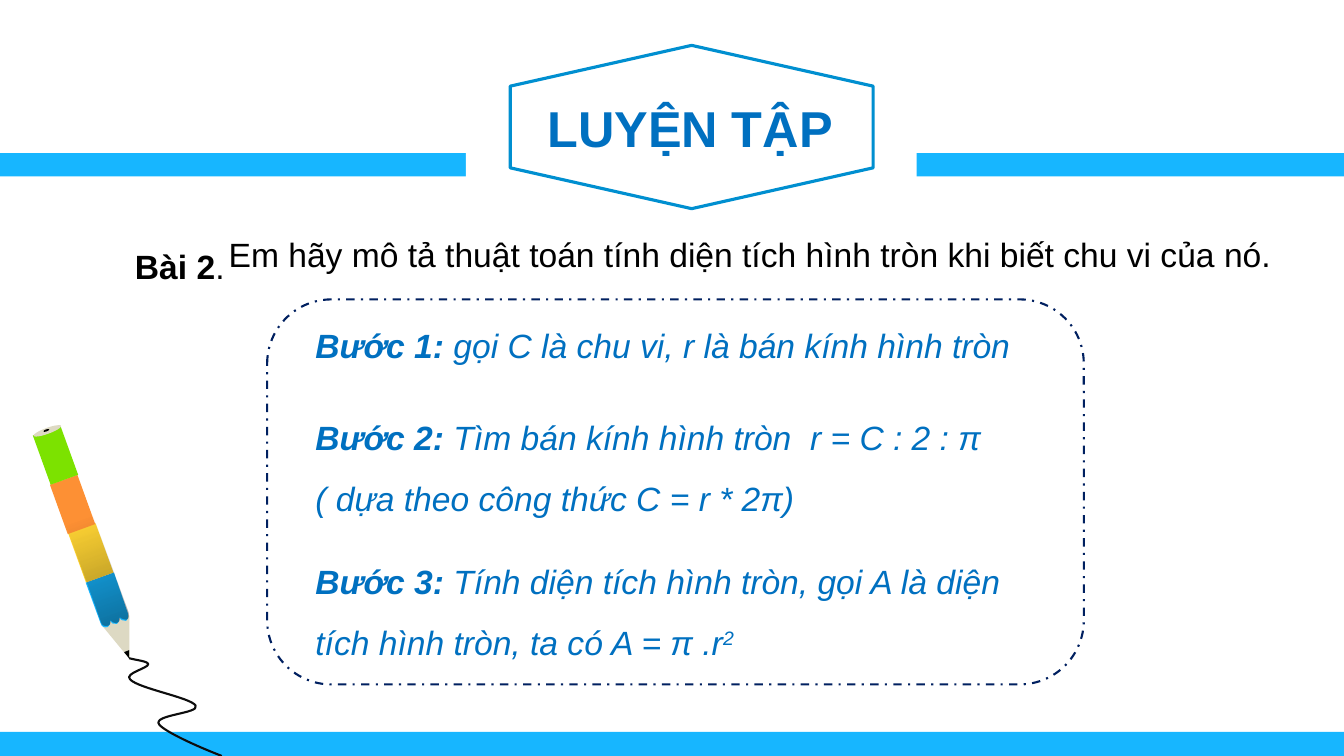
from dataclasses import dataclass
from typing import Optional

from lxml import etree
from pptx import Presentation
from pptx.dml.color import RGBColor
from pptx.enum.dml import MSO_LINE
from pptx.enum.shapes import MSO_SHAPE
from pptx.enum.text import MSO_AUTO_SIZE
from pptx.oxml.ns import qn
from pptx.util import Pt

SCALE = 9144  # EMU in one px, 100 px to the inch
RECT, HEX, OVAL = MSO_SHAPE.RECTANGLE, MSO_SHAPE.HEXAGON, MSO_SHAPE.OVAL
CONE, ROUND = MSO_SHAPE.ISOSCELES_TRIANGLE, MSO_SHAPE.ROUNDED_RECTANGLE
DASH = MSO_LINE.DASH_DOT
GROW = MSO_AUTO_SIZE.SHAPE_TO_FIT_TEXT

COLORS = {
    "sky": "17B6FF", "edge": "008FD0", "blue": "0070C0", "navy": "002060",
    "white": "FFFFFF", "black": "000000", "ink": "0D0D0D", "wood": "DDD9C3",
    "gold": "FFD434", "orange": "FD9034", "green": "7CE200",
}


@dataclass
class Part:
    kind: int
    left: int
    top: int
    width: int
    height: int
    fill: Optional[str] = None
    line: Optional[str] = None
    weight: float = 0
    turn: float = 0
    dash: Optional[int] = None


@dataclass
class Step:
    top: int
    width: int
    height: int
    head: str
    body: str
    space: float
    power: str = ""


deck = Presentation()
deck.slide_width, deck.slide_height = 1333 * SCALE, 750 * SCALE
slide = deck.slides.add_slide(deck.slide_layouts[6])
shapes = slide.shapes


def rgb(name: str) -> RGBColor:
    return RGBColor.from_string(COLORS[name])


def paint(shape, fill: Optional[str], line: Optional[str] = None, weight: float = 0) -> None:
    shape.shadow.inherit = False
    if fill:
        shape.fill.solid()
        shape.fill.fore_color.rgb = rgb(fill)
    else:
        shape.fill.background()
    if line:
        shape.line.color.rgb = rgb(line)
        shape.line.width = Pt(weight)
    else:
        shape.line.fill.background()


def draw(part: Part) -> None:
    box = (part.left, part.top, part.width, part.height)
    shape = shapes.add_shape(part.kind, *(n * SCALE for n in box))
    paint(shape, part.fill, part.line, part.weight)
    shape.rotation = part.turn
    if part.dash:
        shape.line.dash_style = part.dash


def trace(start: tuple, path: list, close: bool = True):
    """Draw a path of points (2 numbers) and cubic curves (6 numbers)."""
    pen = shapes.build_freeform(start[0] * SCALE, start[1] * SCALE, scale=1.0)
    pen.add_line_segments([(p[-2] * SCALE, p[-1] * SCALE) for p in path], close=close)
    shape = pen.convert_to_shape()
    lines = list(shape.element.iter(qn("a:lnTo")))
    for line, item in zip(lines, path):
        if len(item) == 6:
            curve = etree.Element(qn("a:cubicBezTo"))
            for x, y in zip(item[::2], item[1::2]):
                etree.SubElement(curve, qn("a:pt"), x=str(x * SCALE - shape.left),
                                 y=str(y * SCALE - shape.top))
            line.getparent().replace(line, curve)
    return shape


def shade(shape, angle: int) -> None:
    """Fill with black that fades in along the angle."""
    old = shape.fill._xPr.find(qn("a:noFill"))
    grad = etree.Element(qn("a:gradFill"), rotWithShape="1")
    stops = etree.SubElement(grad, qn("a:gsLst"))
    for pos, alpha in ((48, 0), (100, 39)):
        stop = etree.SubElement(stops, qn("a:gs"), pos=str(pos * 1000))
        tint = etree.SubElement(stop, qn("a:srgbClr"), val=COLORS["black"])
        etree.SubElement(tint, qn("a:alpha"), val=str(alpha * 1000))
    etree.SubElement(grad, qn("a:lin"), ang=str(angle * 60000), scaled="0")
    old.getparent().replace(old, grad)


def new_box(left: int, top: int, width: int, height: int, wrap: bool = True, space: float = 1):
    box = shapes.add_textbox(*(n * SCALE for n in (left, top, width, height)))
    frame = box.text_frame
    frame.word_wrap = wrap
    frame.auto_size = GROW
    frame.paragraphs[0].line_spacing = space
    return frame.paragraphs[0]


def write(para, text: str, *, size: int = 24, color: str = "black", bold: bool = False,
          italic: bool = False, base: int = 0) -> None:
    run = para.add_run()
    run.text = text
    font = run.font
    font.name, font.size, font.bold, font.italic = "Arial", Pt(size), bold, italic
    font.color.rgb = rgb(color)
    if base:
        run._r.get_or_add_rPr().set("baseline", str(base * 1000))


# Bars and title frame
for part in (
    Part(RECT, 0, 152, 1333, 23, "sky"),
    Part(RECT, 0, 726, 1333, 24, "sky"),
    Part(HEX, 585, -97, 201, 447, "white", turn=90),
    Part(HEX, 605, -54, 162, 360, "white", "edge", 2.25, 90),
):
    draw(part)

# Pencil: cone, scalloped sleeve, bands, lead, shade and top
TILT = 70.1
draw(Part(CONE, 107, 614, 29, 41, "wood", turn=TILT + 90))


def edge(lift: int) -> list:
    curves = [(101, 622, 104, 623, 107, 622), (109, 621, 110, 618, 109, 616),
              (110, 618, 113, 620, 116, 619), (118, 618, 119, 615, 118, 613),
              (119, 615, 122, 616, 125, 616), (127, 615, 128, 612, 127, 609)]
    return [tuple(n - lift * (i % 2) for i, n in enumerate(c)) for c in curves]


paint(trace((113, 568), [(85, 578), (100, 619), *edge(0)]), "sky")
for i, color in enumerate(("gold", "orange", "green")):
    draw(Part(RECT, 64 - round(17.5 * i), 534 - round(48.5 * i), 52, 29, color, turn=TILT))
paint(trace((128, 645), [(123, 647), (128, 653)]), "black")
cover = trace((59, 420), [(32, 429), (100, 617), *edge(2)])
paint(cover, None)
shade(cover, 70)
draw(Part(OVAL, 44, 413, 6, 29, "wood", turn=TILT))
draw(Part(OVAL, 45, 424, 2, 6, "black", turn=TILT))

# Scribble
paint(trace((128, 653), [
    (135, 655, 147, 656, 147, 659), (147, 663, 123, 668, 129, 674),
    (137, 683, 189, 692, 194, 700), (199, 708, 150, 709, 158, 719),
    (164, 726, 194, 740, 220, 750)], close=False), None, "ink", 1.5)

# Title and task
write(new_box(533, 91, 306, 71, wrap=False), "LUYỆN TẬP", size=36, color="blue", bold=True)
task = new_box(124, 199, 1067, 78, space=2)
write(task, "Bài 2", bold=True)
write(task, ".")
write(new_box(217, 227, 1100, 50),
      "Em hãy mô tả thuật toán tính diện tích hình tròn khi biết chu vi của nó.")

# Steps in their frame
for step in (
    Step(317, 804, 50, "Bước 1: ", "gọi C là chu vi, r là bán kính hình tròn", 1),
    Step(389, 698, 131, "Bước 2: ",
         "Tìm bán kính hình tròn  r = C : 2 : π ( dựa theo công thức C = r * 2π)", 1.5),
    Step(532, 739, 131, "Bước 3: ",
         "Tính diện tích hình tròn, gọi A là diện tích hình tròn, ta có A = π .r", 1.5, "2"),
):
    para = new_box(303, step.top, step.width, step.height, space=step.space)
    write(para, step.head, color="blue", bold=True, italic=True)
    write(para, step.body, color="blue", italic=True)
    if step.power:
        write(para, step.power, color="blue", italic=True, base=30)
draw(Part(ROUND, 265, 297, 810, 382, None, "navy", 1.5, dash=DASH))

deck.save("out.pptx")
